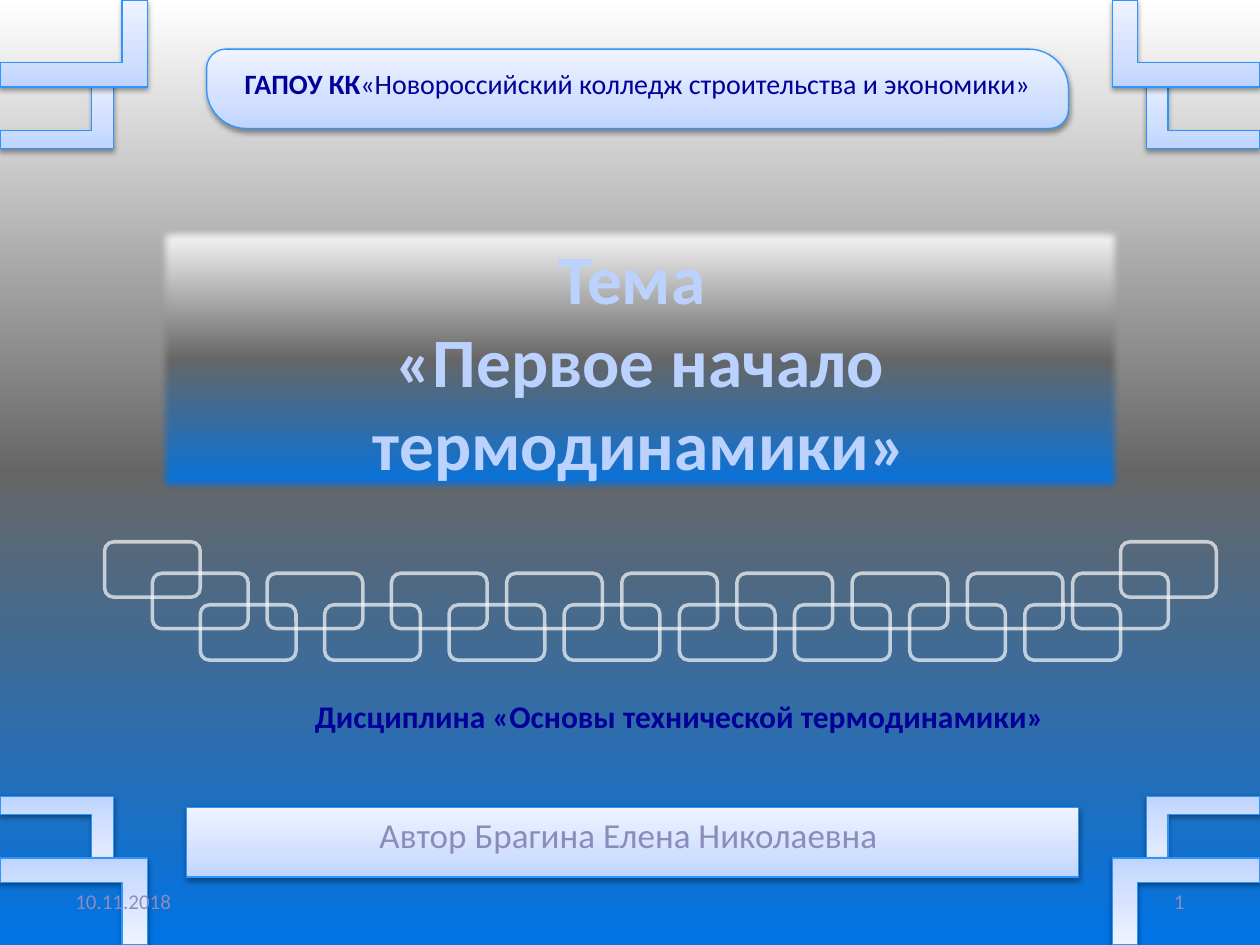
from itertools import accumulate, product

from lxml import etree
from pptx import Presentation
from pptx.dml.color import RGBColor
from pptx.enum import shapes, text
from pptx.oxml.ns import qn
from pptx.util import Inches, Pt

WIDTH, HEIGHT = 10, 7.5
COLORS = {
    "blue": "0073E5", "gray": "666666", "white": "FFFFFF",
    "pale": "BFD4FF", "paler": "D2E0FF", "palest": "EEF3FF",
    "edge": "2D96FE", "title_edge": "3399FF", "shadow": "000000",
    "title": "BBD2FF", "muted": "8C8CBA", "navy": "010199",
}
SKY = [(0, "blue"), (50, "gray"), (100, "white")]
PANEL = [(0, "pale"), (35, "paler"), (100, "palest")]
MSO = shapes.MSO_SHAPE
ALIGN = text.PP_ALIGN
ANCHOR = text.MSO_ANCHOR


def rgb(name):
    return RGBColor.from_string(COLORS[name])


def add_node(parent, tag, **attrs):
    return etree.SubElement(parent, qn(tag), {k: str(v) for k, v in attrs.items()})


def fill_gradient(owner, fill, stops):
    """Fill with a gradient whose first stop lies at the bottom."""
    fill.gradient()
    grad = owner.element.find(".//" + qn("a:gradFill"))
    for child in list(grad):
        grad.remove(child)
    grad.set("rotWithShape", "1")
    stop_list = add_node(grad, "a:gsLst")
    for pos, color in stops:
        stop = add_node(stop_list, "a:gs", pos=pos * 1000)
        add_node(stop, "a:srgbClr", val=COLORS[color])
    add_node(grad, "a:lin", ang=270 * 60000, scaled=0)


def add_shape(parent, kind, box, line, line_width, adjustments=()):
    sp = parent.shapes.add_shape(kind, *map(Inches, box))
    for i, value in enumerate(adjustments):
        sp.adjustments[i] = value
    sp.shadow.inherit = False
    sp.line.color.rgb = rgb(line)
    sp.line.width = Pt(line_width)
    return sp


def add_panel(parent, kind, box, adjustments=()):
    """Pale shape with a thin edge and a soft shadow below it."""
    sp = add_shape(parent, kind, box, "edge", 0.75, adjustments)
    fill_gradient(sp, sp.fill, PANEL)
    effects = sp.element.spPr.find(qn("a:effectLst"))
    shadow = add_node(effects, "a:outerShdw", blurRad=Pt(3.1), dist=Pt(1.6),
                      dir=90 * 60000, rotWithShape=0)
    color = add_node(shadow, "a:srgbClr", val=COLORS["shadow"])
    add_node(color, "a:alpha", val=38000)
    return sp


def write(sp, runs, size, color, align=ALIGN.LEFT, anchor=ANCHOR.TOP, before=0):
    """Write one paragraph of (text, bold) runs."""
    tf = sp.text_frame
    tf.word_wrap = True
    tf.vertical_anchor = anchor
    p = tf.paragraphs[0]
    p.alignment = align
    p.space_before = Pt(before)
    p.font.name, p.font.size = "Calibri", Pt(size)
    p.font.color.rgb = rgb(color)
    for content, bold in runs:
        first, *rest = content.split("\n")
        r = p.add_run()
        r.text, r.font.bold = first, bold
        for line in rest:
            p.add_line_break()
            r = p.add_run()
            r.text, r.font.bold = line, bold
    for r in p.runs:
        r.font.name, r.font.size = "Calibri", Pt(size)
        r.font.color.rgb = rgb(color)


def add_text(s, box, content, size, color, bold=False, **layout):
    sp = s.shapes.add_textbox(*map(Inches, box))
    write(sp, [(content, bold)], size, color, **layout)


def add_title(s):
    sp = add_shape(s, MSO.RECTANGLE, (1.25, 1.8, 7.66, 2.11), "title_edge", 2)
    fill_gradient(sp, sp.fill, SKY)
    add_node(sp.element.spPr.find(qn("a:effectLst")), "a:softEdge", rad=Pt(5))
    write(sp, [("Тема \n«Первое начало термодинамики»", True)], 39.6, "title",
          ALIGN.CENTER, ANCHOR.MIDDLE)


def add_corners(s):
    """Two nested brackets, mirrored into each corner of the slide."""
    brackets = [(0.55, 0.9, 0.63, (0.228, 0.272)), (0, 1.17, 0.69, (0.282, 0.291))]
    for left, bottom in product((True, False), repeat=2):
        group = s.shapes.add_group_shape()
        for top, w, h, adjustments in brackets:
            x = 0 if left else WIDTH - w
            y = HEIGHT - top - h if bottom else top
            sp = add_panel(group, MSO.CORNER, (x, y, w, h), adjustments)
            xfrm = sp.element.spPr.find(qn("a:xfrm"))
            xfrm.set("flipH", str(int(left)))
            xfrm.set("flipV", str(int(bottom)))


def add_chain(s):
    """Zigzag of outlined links with a raised link at each end."""
    near, step, far = 0.38, (8.14 - 3.57) / 10, 0.53
    gaps = [near, near, far, step, far, *[step] * 11, near, near]
    lefts = list(accumulate(gaps, initial=0.83))
    group = s.shapes.add_group_shape()
    for i, left in enumerate(lefts):
        top = 4.3 if i in (0, len(lefts) - 1) else 4.55 if i % 2 else 4.8
        sp = add_shape(group, MSO.ROUNDED_RECTANGLE, (left, top, 0.76, 0.44), "white", 2)
        sp.fill.background()
        color = sp.element.spPr.find(qn("a:ln")).find(".//" + qn("a:srgbClr"))
        add_node(color, "a:alpha", val=67000)


def main():
    prs = Presentation()
    prs.slide_width, prs.slide_height = Inches(WIDTH), Inches(HEIGHT)
    s = prs.slides.add_slide(prs.slide_layouts[6])
    fill_gradient(s, s.background.fill, SKY)

    add_title(s)
    author = add_panel(s, MSO.RECTANGLE, (1.48, 6.41, 7.08, 0.55))
    write(author, [("Автор Брагина Елена Николаевна ", False)], 20, "muted",
          ALIGN.CENTER, before=4)
    add_corners(s)
    add_chain(s)
    add_text(s, (0.5, 6.95, 2.33, 0.4), "10.11.2018", 12, "muted", anchor=ANCHOR.MIDDLE)
    add_text(s, (7.17, 6.95, 2.33, 0.4), "1", 12, "muted",
             align=ALIGN.RIGHT, anchor=ANCHOR.MIDDLE)
    college = add_panel(s, MSO.ROUND_2_DIAG_RECTANGLE, (1.64, 0.39, 6.84, 0.63),
                        (0.241, 0.5))
    write(college, [("ГАПОУ КК", True),
                    ("«Новороссийский колледж строительства и экономики»", False)],
          16, "navy", ALIGN.CENTER, before=3.2)
    add_text(s, (2.4, 5.48, 6.06, 0.4), "Дисциплина «Основы технической термодинамики»",
             18, "navy", bold=True)
    prs.save("out.pptx")


if __name__ == "__main__":
    main()
